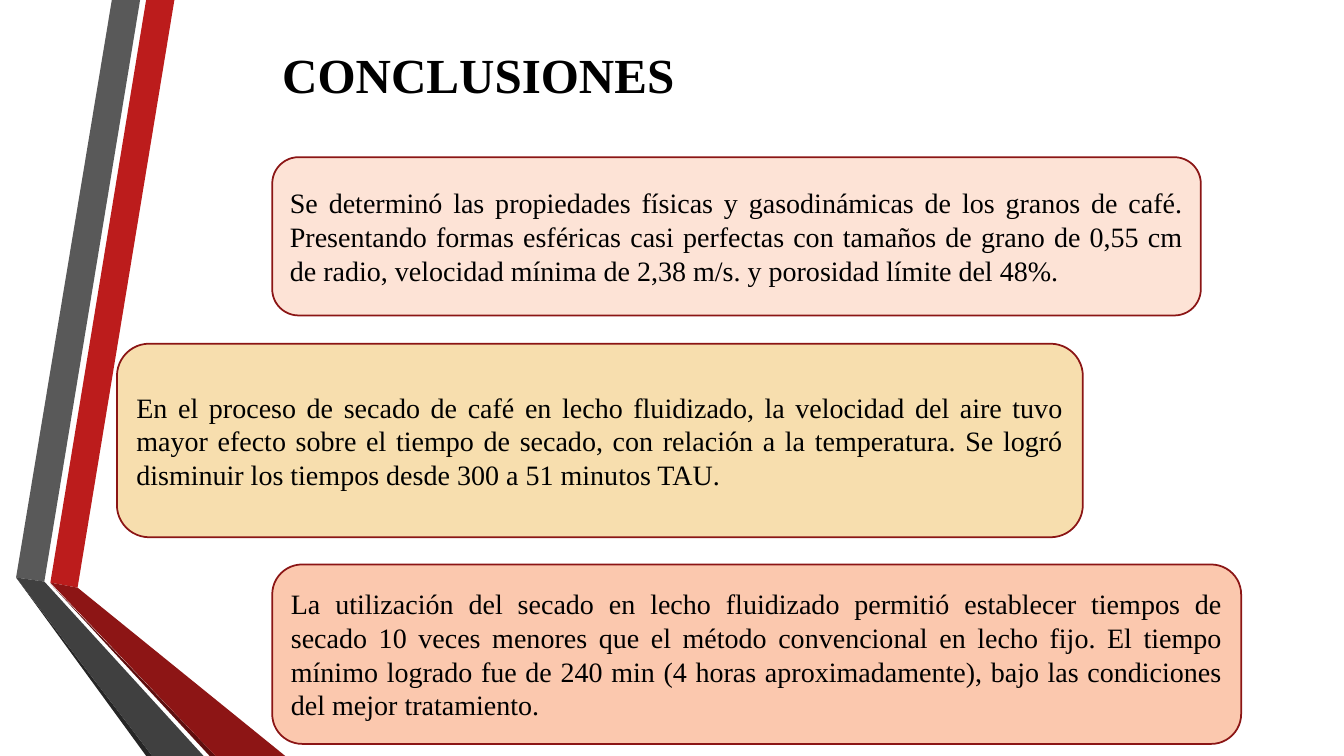
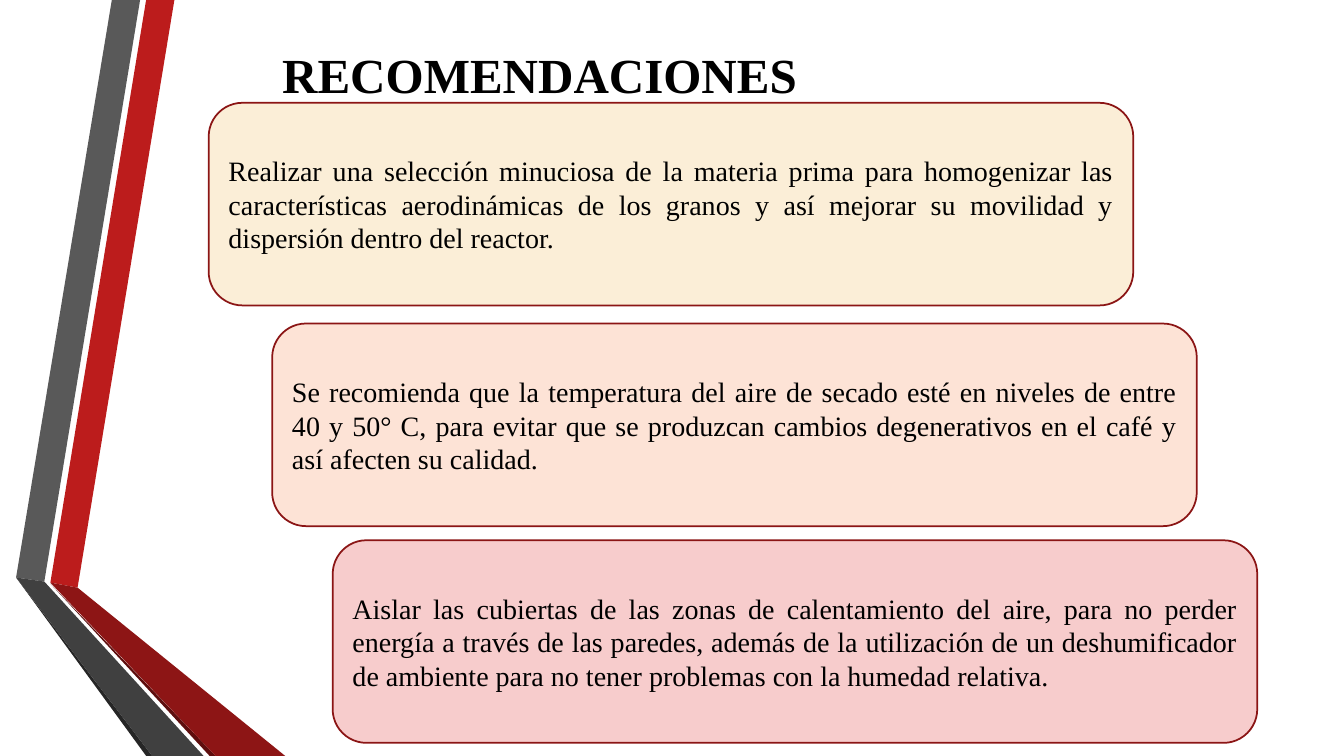
from typing import NamedTuple

from pptx import Presentation
from pptx.dml.color import RGBColor
from pptx.enum.shapes import MSO_SHAPE as Preset
from pptx.enum.text import MSO_ANCHOR as Anchor, PP_ALIGN as Align
from pptx.shapes.autoshape import Shape
from pptx.slide import Slide
from pptx.util import Inches, Pt

FONT = "Times New Roman"
TEXT_COLOR = "000000"
BORDER_COLOR = "8B1515"
MARGIN_LEFT = 2.7
PALE_ORANGE = "FDE3D6"


class Band(NamedTuple):
    color: str
    points: list[tuple[float, float]]


class Card(NamedTuple):
    left: float
    top: float
    width: float
    height: float
    color: str
    text: str


class Page(NamedTuple):
    title: str
    title_width: float
    cards: list[Card]


BANDS = [
    Band("BC1C1C", [(0.5, 5.78), (0.77, 5.83), (1.73, 0), (1.45, 0)]),
    Band("595959", [(1.39, 0), (1.11, 0), (0.16, 5.73), (0.44, 5.77)]),
    Band("262626", [(0.16, 5.73), (1.45, 7.5), (1.51, 7.5)]),
    Band("5E0E0E", [(0.5, 5.79), (2.08, 7.5), (2.14, 7.5)]),
    Band("8D1515", [(0.5, 5.78), (2.14, 7.5), (2.83, 7.5), (0.77, 5.83)]),
    Band("404040", [(2.02, 7.5), (0.44, 5.77), (0.16, 5.73), (1.51, 7.5)]),
]

PAGES = [
    Page("CONCLUSIONES", 5.18, [
        Card(MARGIN_LEFT, 1.56, 9.21, 1.57, PALE_ORANGE,
             "Se determinó las propiedades físicas y gasodinámicas de los granos de café. "
             "Presentando formas esféricas casi perfectas con tamaños de grano de 0,55 cm "
             "de radio, velocidad mínima de 2,38 m/s. y porosidad límite del 48%."),
        Card(1.16, 3.41, 9.58, 1.92, "F7DEAE",
             "En el proceso de secado de café en lecho fluidizado, la velocidad del aire tuvo "
             "mayor efecto sobre el tiempo de secado, con relación a la temperatura. Se logró "
             "disminuir los tiempos desde 300 a 51 minutos TAU."),
        Card(MARGIN_LEFT, 5.6, 9.61, 1.78, "FBC8AE",
             "La utilización del secado en lecho fluidizado permitió establecer tiempos de "
             "secado 10 veces menores que el método convencional en lecho fijo. El tiempo "
             "mínimo logrado fue de 240 min (4 horas aproximadamente), bajo las condiciones "
             "del mejor tratamiento."),
    ]),
    Page("RECOMENDACIONES", 5.92, [
        Card(2.07, 1.02, 9.17, 2.01, "FBEED7",
             "Realizar una selección minuciosa de la materia prima para homogenizar las "
             "características aerodinámicas de los granos y así mejorar su movilidad y "
             "dispersión dentro del reactor."),
        Card(MARGIN_LEFT, 3.21, 9.17, 2.01, PALE_ORANGE,
             "Se recomienda que la temperatura del aire de secado esté en niveles de entre "
             "40 y 50° C, para evitar que se produzcan cambios degenerativos en el café y "
             "así afecten su calidad."),
        Card(3.3, 5.36, 9.17, 2.01, "F7CCCC",
             "Aislar las cubiertas de las zonas de calentamiento del aire, para no perder "
             "energía a través de las paredes, además de la utilización de un deshumificador "
             "de ambiente para no tener problemas con la humedad relativa."),
    ]),
]


def paint(shape: Shape, fill: str, border: str | None = None) -> None:
    shape.shadow.inherit = False
    shape.fill.solid()
    shape.fill.fore_color.rgb = RGBColor.from_string(fill)
    if border:
        shape.line.color.rgb = RGBColor.from_string(border)
        shape.line.width = Pt(1.25)
    else:
        shape.line.fill.background()


def write(shape: Shape, text: str, *, size: float, bold: bool = False,
          align: Align = Align.LEFT, anchor: Anchor = Anchor.TOP) -> None:
    frame = shape.text_frame
    frame.word_wrap = True
    frame.vertical_anchor = anchor
    paragraph = frame.paragraphs[0]
    paragraph.alignment = align
    run = paragraph.add_run()
    run.text = text
    run.font.name = FONT
    run.font.size = Pt(size)
    run.font.bold = bold
    run.font.color.rgb = RGBColor.from_string(TEXT_COLOR)


def draw_band(slide: Slide, band: Band) -> None:
    start, *rest = [(Inches(x), Inches(y)) for x, y in band.points]
    outline = slide.shapes.build_freeform(*start)
    outline.add_line_segments(rest, close=True)
    paint(outline.convert_to_shape(), band.color)


def draw_title(slide: Slide, title: str, width: float) -> None:
    heading = slide.shapes.add_textbox(
        Inches(MARGIN_LEFT), Inches(0.39), Inches(width), Inches(0.69))
    write(heading, title, size=35, bold=True)


def draw_card(slide: Slide, card: Card) -> None:
    panel = slide.shapes.add_shape(
        Preset.ROUNDED_RECTANGLE, Inches(card.left), Inches(card.top),
        Inches(card.width), Inches(card.height))
    paint(panel, card.color, BORDER_COLOR)
    write(panel, card.text, size=20, align=Align.JUSTIFY, anchor=Anchor.MIDDLE)


def main() -> None:
    """Build the conclusions and recommendations slides."""
    deck = Presentation()
    deck.slide_width = Inches(13.33)
    deck.slide_height = Inches(7.5)
    blank = deck.slide_layouts[6]
    for page in PAGES:
        slide = deck.slides.add_slide(blank)
        for band in BANDS:
            draw_band(slide, band)
        draw_title(slide, page.title, page.title_width)
        for card in page.cards:
            draw_card(slide, card)
    deck.save("out.pptx")


if __name__ == "__main__":
    main()
